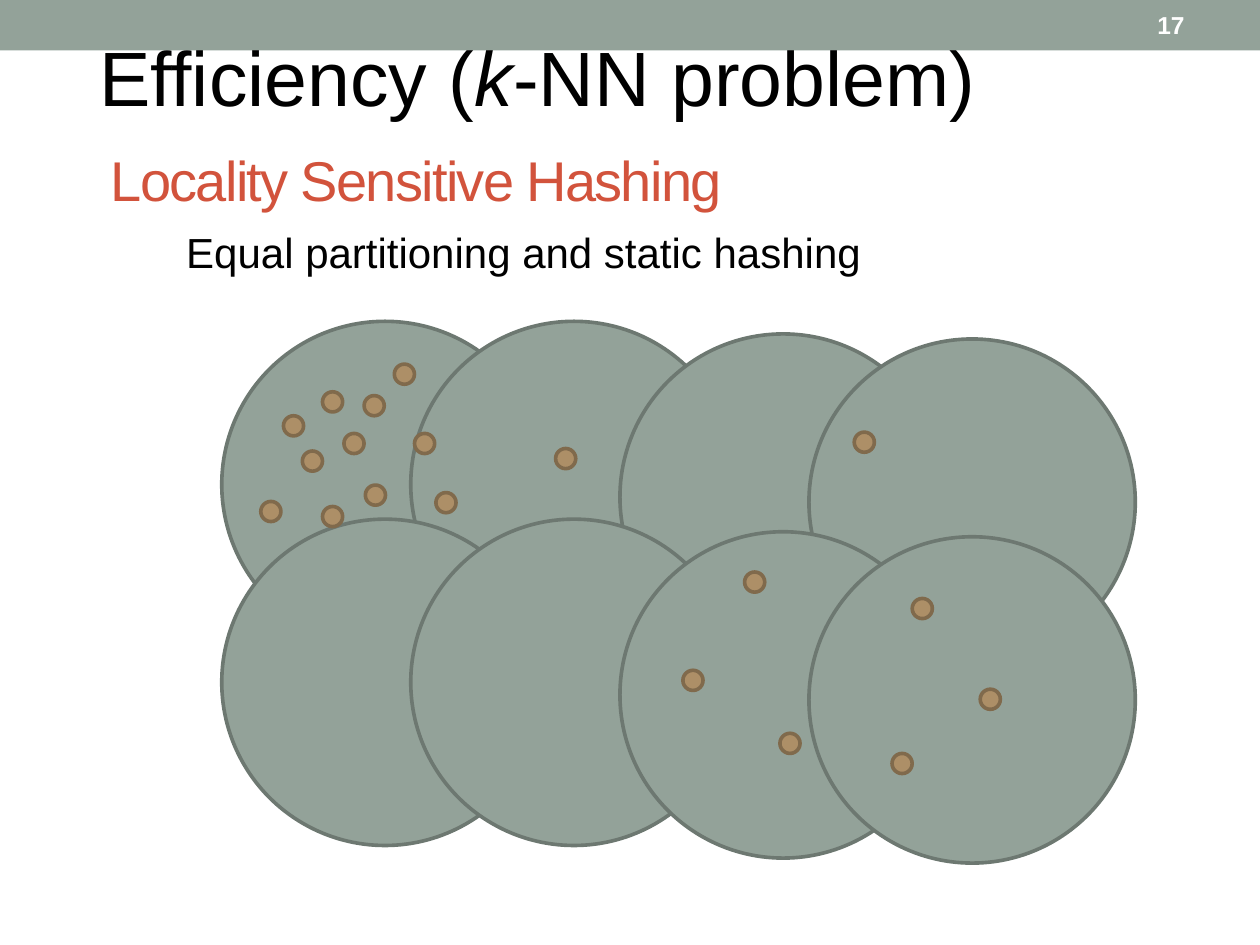
import pptx
import pptx.util
import pptx.dml.color
import pptx.enum.shapes
import pptx.enum.text

Inches, Pt = pptx.util.Inches, pptx.util.Pt
RGBColor = pptx.dml.color.RGBColor
Shape = pptx.enum.shapes.MSO_SHAPE
Anchor = pptx.enum.text.MSO_ANCHOR
Align = pptx.enum.text.PP_ALIGN
AutoSize = pptx.enum.text.MSO_AUTO_SIZE

SAGE = RGBColor(0x93, 0xA2, 0x99)
SAGE_EDGE = RGBColor(0x6D, 0x78, 0x71)
TAN = RGBColor(0xAD, 0x8F, 0x67)
TAN_EDGE = RGBColor(0x80, 0x6A, 0x4C)
RUST = RGBColor(0xD2, 0x53, 0x3C)
BLACK = RGBColor(0, 0, 0)
WHITE = RGBColor(255, 255, 255)

prs = pptx.Presentation()
prs.slide_width, prs.slide_height = Inches(10), Inches(7.5)
slide = prs.slides.add_slide(prs.slide_layouts[5])


def add_filled(kind, left, top, width, height, fill, edge=None):
    shape = slide.shapes.add_shape(
        kind, Inches(left), Inches(top), Inches(width), Inches(height))
    shape.shadow.inherit = False
    shape.fill.solid()
    shape.fill.fore_color.rgb = fill
    if edge is None:
        shape.line.fill.background()
    else:
        shape.line.color.rgb = edge
        shape.line.width = Pt(2.08)


def write(box, place, pieces, size, color, frame_format, paragraph_format, bold=False):
    box.left, box.top, box.width, box.height = [Inches(v) for v in place]
    frame = box.text_frame
    for name, value in {"word_wrap": True, **frame_format}.items():
        setattr(frame, name, value)
    paragraph = frame.paragraphs[0]
    for name, value in paragraph_format.items():
        setattr(paragraph, name, value)
    for text, italic in pieces:
        run = paragraph.add_run()
        run.text = text
        font_format = {"name": "Arial", "size": Pt(size), "bold": bold, "italic": italic}
        for name, value in font_format.items():
            setattr(run.font, name, value)
        run.font.color.rgb = color


# Top band
add_filled(Shape.RECTANGLE, 0, 0, 10, 0.4, SAGE)

# Topic heading
topic = slide.shapes.add_textbox(0, 0, 0, 0)
write(topic, (0.69, 0, 7.77, 1.3),
      [("Efficiency (", False), ("k", True), ("-NN problem)", False)], 44, BLACK,
      {"vertical_anchor": Anchor.MIDDLE}, {"line_spacing": 0.9})

# Hash buckets: two rows of overlapping circles, stepping down to the right
BUCKET = 2.59
ROW_STEP = 1.57
bucket_columns = [(1.76, 2.55), (3.26, 2.55), (4.92, 2.65), (6.42, 2.69)]
for row in range(2):
    for left, top in bucket_columns:
        add_filled(Shape.OVAL, left, top + row * ROW_STEP, BUCKET, BUCKET, SAGE, SAGE_EDGE)

# Slide title, with tightened letters
method = slide.shapes.title
write(method, (0.78, 0.7, 8.62, 1.45), [("Locality Sensitive Hashing", False)], 32, RUST,
      {"vertical_anchor": Anchor.MIDDLE, "auto_size": AutoSize.NONE},
      {"alignment": Align.LEFT})
method.text_frame.paragraphs[0].runs[0].font._element.set("spc", "-100")

# Description
description = slide.shapes.add_textbox(0, 0, 0, 0)
write(description, (1.38, 1.75, 6.56, 0.5),
      [("Equal partitioning and static hashing", False)], 24, BLACK,
      {"auto_size": AutoSize.SHAPE_TO_FIT_TEXT}, {})

# Data points, grouped by the bucket they fall in
POINT = 0.16
points = [
    # crowded first bucket
    (2.56, 3.11), (2.73, 3.44), (2.89, 3.14), (2.4, 3.58), (2.9, 3.85), (3.29, 3.44),
    (2.56, 4.02), (3.46, 3.91), (2.25, 3.3), (2.07, 3.98), (3.13, 2.89),
    # rest of the upper row
    (4.41, 3.56), (6.78, 3.43),
    # lower row
    (5.91, 4.54), (5.42, 5.32), (6.19, 5.82),
    (7.24, 4.75), (7.78, 5.47), (7.08, 5.98),
]
for left, top in points:
    add_filled(Shape.OVAL, left, top, POINT, POINT, TAN, TAN_EDGE)

# Slide number
number = slide.shapes.add_textbox(0, 0, 0, 0)
write(number, (8.33, 0.02, 1.17, 0.36), [("17", False)], 14, WHITE,
      {"vertical_anchor": Anchor.MIDDLE}, {"alignment": Align.RIGHT}, bold=True)

prs.save("out.pptx")
